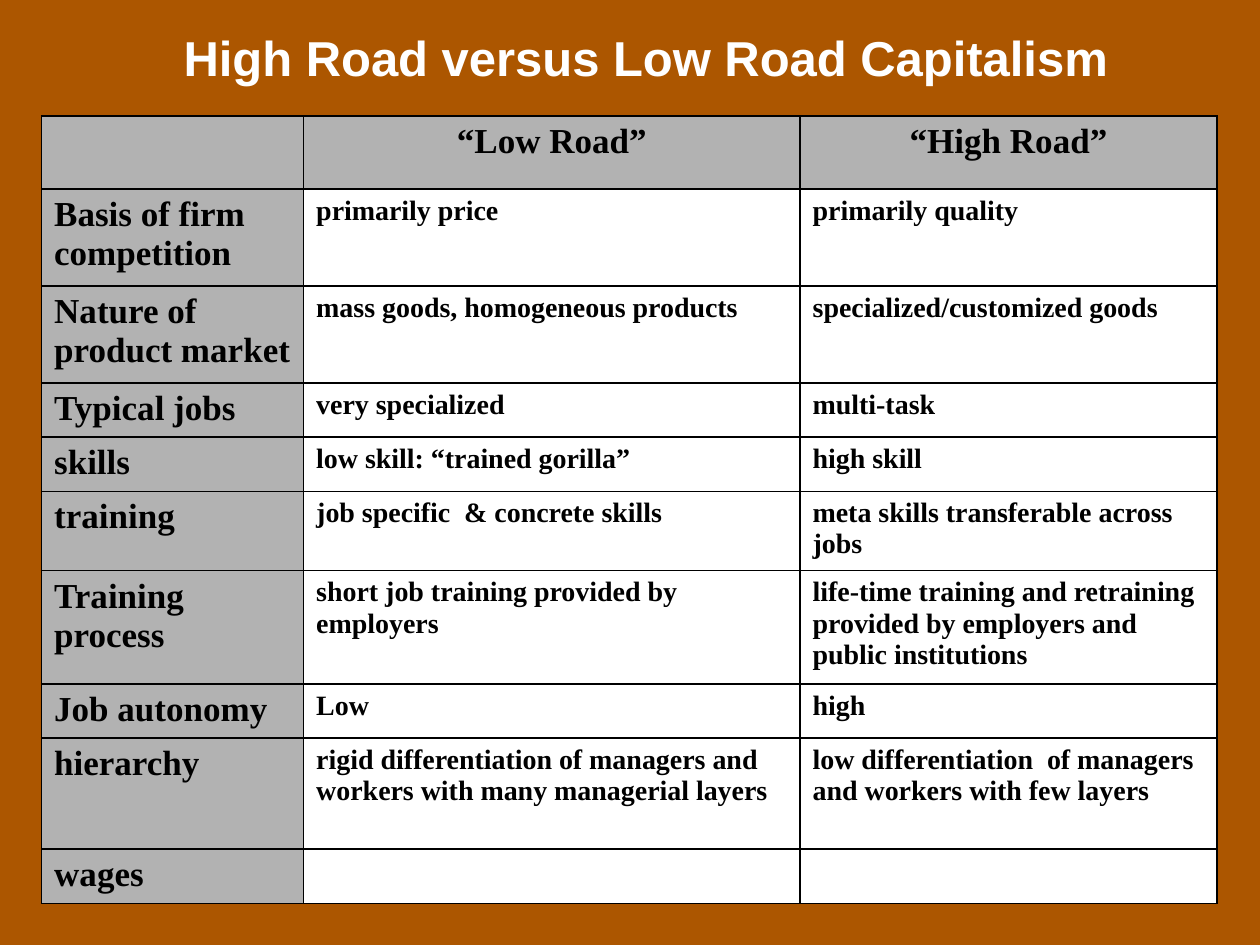
from typing import NamedTuple

from lxml.etree import SubElement as Sub
from pptx import Presentation
from pptx.dml.color import RGBColor as RGB
from pptx.enum.text import PP_ALIGN as Align
from pptx.oxml.ns import qn
from pptx.util import Inches, Pt

BROWN = RGB(0xAC, 0x56, 0x00)
GRAY = RGB(0xB2, 0xB2, 0xB2)
WHITE = RGB(0xFF, 0xFF, 0xFF)
BLACK = RGB(0, 0, 0)
SERIF = "Times New Roman"


class Row(NamedTuple):
    height: float
    label: str
    low: str
    high: str


WIDTHS = (2.08, 3.94, 3.31)
ROWS = (
    Row(0.58, "", "“Low Road”", "“High Road”"),
    Row(0.77, "Basis of firm competition", "primarily price", "primarily quality"),
    Row(0.77, "Nature of product market", "mass goods, homogeneous products",
        "specialized/customized goods"),
    Row(0.43, "Typical jobs", "very specialized", "multi-task"),
    Row(0.43, "skills", "low skill: “trained gorilla”", "high skill"),
    Row(0.63, "training", "job specific  & concrete skills",
        "meta skills transferable across jobs"),
    Row(0.9, "Training\nprocess", "short job training provided by employers",
        "life-time training and retraining provided by employers and public institutions"),
    Row(0.43, "Job autonomy", "Low", "high"),
    Row(0.88, "hierarchy",
        "rigid differentiation of managers and workers with many managerial layers",
        "low differentiation  of managers and workers with few layers"),
    Row(0.43, "wages", "", ""),
)


def write(frame, text: str, *, size: int, font: str = SERIF,
          color: RGB = BLACK, align: Align = Align.LEFT) -> None:
    frame.word_wrap = True
    frame.text = text
    for para in frame.paragraphs:
        para.alignment = align
        para.font.size = Pt(size)
        for run in para.runs:
            run.font.size = Pt(size)
            run.font.name = font
            run.font.bold = True
            run.font.color.rgb = color


def edge(cell) -> None:
    props = cell._tc.get_or_add_tcPr()
    for place, side in enumerate(("lnL", "lnR", "lnT", "lnB")):
        line = Sub(props, qn(f"a:{side}"), w=str(Pt(1)))
        fill = Sub(line, qn("a:solidFill"))
        Sub(fill, qn("a:srgbClr"), val=str(BLACK))
        props.insert(place, line)


def draw_grid(slide) -> None:
    high = sum(row.height for row in ROWS)
    grid = slide.shapes.add_table(
        len(ROWS), len(WIDTHS), Inches(0.33), Inches(0.92),
        Inches(sum(WIDTHS)), Inches(high)).table
    for col, width in zip(grid.columns, WIDTHS):
        col.width = Inches(width)
    for r, row in enumerate(ROWS):
        grid.rows[r].height = Inches(row.height)
        for c, text in enumerate((row.label, row.low, row.high)):
            cell = grid.cell(r, c)
            head = r == 0 or c == 0
            cell.fill.solid()
            cell.fill.fore_color.rgb = GRAY if head else WHITE
            edge(cell)
            write(cell.text_frame, text, size=20 if head else 16,
                  align=Align.LEFT if r else Align.CENTER)


def main() -> None:
    deck = Presentation()
    deck.slide_width, deck.slide_height = Inches(10), Inches(7.5)
    slide = deck.slides.add_slide(deck.slide_layouts[6])
    slide.background.fill.solid()
    slide.background.fill.fore_color.rgb = BROWN
    draw_grid(slide)
    title = slide.shapes.add_textbox(
        Inches(1.25), Inches(0.17), Inches(7.75), Inches(0.57))
    write(title.text_frame, "High Road versus Low Road Capitalism",
          size=28, font="Arial", color=WHITE, align=Align.CENTER)
    deck.save("out.pptx")


if __name__ == "__main__":
    main()
